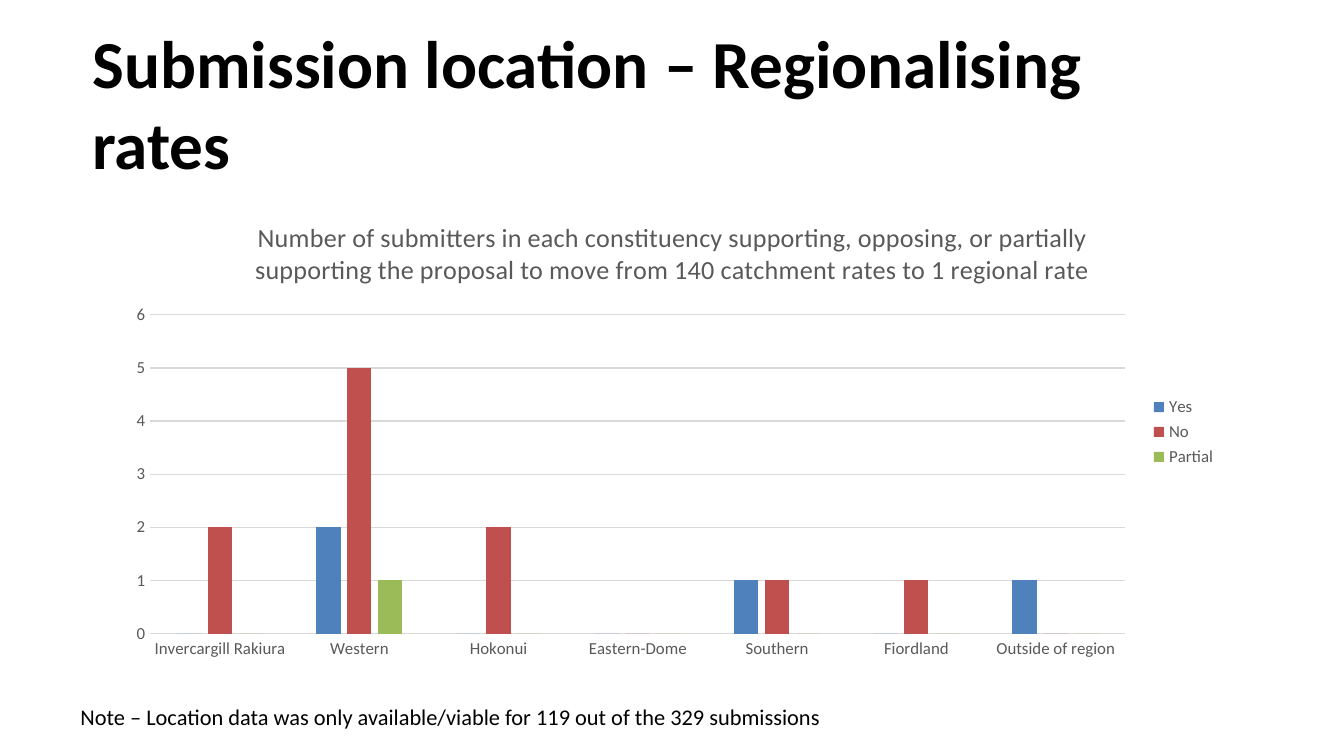
from dataclasses import dataclass

from lxml import etree
from pptx import Presentation
from pptx.chart.data import CategoryChartData
from pptx.dml.color import RGBColor
from pptx.enum.chart import XL_CHART_TYPE, XL_LEGEND_POSITION, XL_TICK_MARK
from pptx.enum.text import MSO_ANCHOR
from pptx.oxml.ns import qn
from pptx.util import Inches, Pt

COLUMN = XL_CHART_TYPE.COLUMN_CLUSTERED
RIGHT = XL_LEGEND_POSITION.RIGHT
NO_TICK = XL_TICK_MARK.NONE
MIDDLE = MSO_ANCHOR.MIDDLE


@dataclass(frozen=True)
class Theme:
    """Colours, font and type sizes of the slide."""
    font: str = "Calibri"
    ink: str = "000000"
    grey: str = "595959"
    rule: str = "D9D9D9"
    bars: tuple = ("4F81BD", "C0504D", "9BBB59")
    head: int = 36
    title: int = 14
    note: int = 12
    base: int = 10
    label: int = 9


THEME = Theme()
HEAD = "Submission location – Regionalising rates"
NOTE = "Note – Location data was only available/viable for 119 out of the 329 submissions"
TITLE = ("Number of submitters in each constituency supporting, opposing, or partially "
         "supporting the proposal to move from 140 catchment rates to 1 regional rate")
AREAS = ("Invercargill Rakiura", "Western", "Hokonui", "Eastern-Dome",
         "Southern", "Fiordland", "Outside of region")
VOTES = {
    "Yes": (0, 2, 0, 0, 1, 0, 1),
    "No": (2, 5, 2, 0, 1, 1, 0),
    "Partial": (0, 1, 0, 0, 0, 0, 0),
}
PLOT = {"x": 1 / 32, "y": 0.25, "w": 7 / 8, "h": 0.68}


def style(font, size, color, bold=False):
    """Set the face, size, colour and weight of a font."""
    font.name = THEME.font
    font.size = Pt(size)
    font.bold = bold
    font.color.rgb = RGBColor.from_string(color)


def rule(line):
    """Draw a thin grey line."""
    line.width = Pt(0.75)
    line.color.rgb = RGBColor.from_string(THEME.rule)


def add_text(slide, box, text, size, bold=False, wrap=True):
    """Place one line of text, centred vertically in its box."""
    frame = slide.shapes.add_textbox(*map(Inches, box)).text_frame
    frame.word_wrap = wrap
    frame.vertical_anchor = MIDDLE
    run = frame.paragraphs[0].add_run()
    run.text = text
    style(run.font, size, THEME.ink, bold)


def set_plot(chart):
    """Fix the inner plot area as shares of the chart."""
    area = chart.element.find(".//" + qn("c:plotArea"))
    layout = area.find(qn("c:layout"))
    if layout is None:
        layout = etree.Element(qn("c:layout"))
        area.insert(0, layout)
    manual = etree.SubElement(layout, qn("c:manualLayout"))
    parts = {"layoutTarget": "inner", "xMode": "edge", "yMode": "edge", **PLOT}
    for name, value in parts.items():
        etree.SubElement(manual, qn("c:" + name)).set("val", str(value))


def add_votes(slide, box):
    """Place the column chart of votes by area."""
    data = CategoryChartData(number_format="General")
    data.categories = AREAS
    for name, votes in VOTES.items():
        data.add_series(name, votes)
    chart = slide.shapes.add_chart(COLUMN, *map(Inches, box), data).chart
    style(chart.font, THEME.base, THEME.ink)

    chart.has_title = True
    run = chart.chart_title.text_frame.paragraphs[0].add_run()
    run.text = TITLE
    style(run.font, THEME.title, THEME.grey)
    chart.chart_title.include_in_layout = False

    chart.has_legend = True
    chart.legend.position = RIGHT
    chart.legend.include_in_layout = False
    style(chart.legend.font, THEME.label, THEME.grey)

    for axis in (chart.category_axis, chart.value_axis):
        axis.major_tick_mark = axis.minor_tick_mark = NO_TICK
        style(axis.tick_labels.font, THEME.label, THEME.grey)
    rule(chart.category_axis.format.line)
    scale = chart.value_axis
    scale.minimum_scale, scale.maximum_scale, scale.major_unit = 0, 6, 1
    scale.format.line.fill.background()
    rule(scale.major_gridlines.format.line)

    plot = chart.plots[0]
    plot.gap_width, plot.overlap = 219, -27
    plot.vary_by_categories = False
    for series, color in zip(plot.series, THEME.bars):
        series.format.fill.solid()
        series.format.fill.fore_color.rgb = RGBColor.from_string(color)
    set_plot(chart)


def main():
    """Build the slide and save it."""
    deck = Presentation()
    deck.slide_width = Inches(10)
    deck.slide_height = deck.slide_width * 9 // 16
    slide = deck.slides.add_slide(deck.slide_layouts[6])
    add_text(slide, (0.59, 0.29, 8.19, 0.94), HEAD, THEME.head, bold=True)
    add_votes(slide, (0.86, 1.47, 8.29, 3.49))
    add_text(slide, (0.5, 5.18, 5.78, 0.3), NOTE, THEME.note, wrap=False)
    deck.save("out.pptx")


if __name__ == "__main__":
    main()
